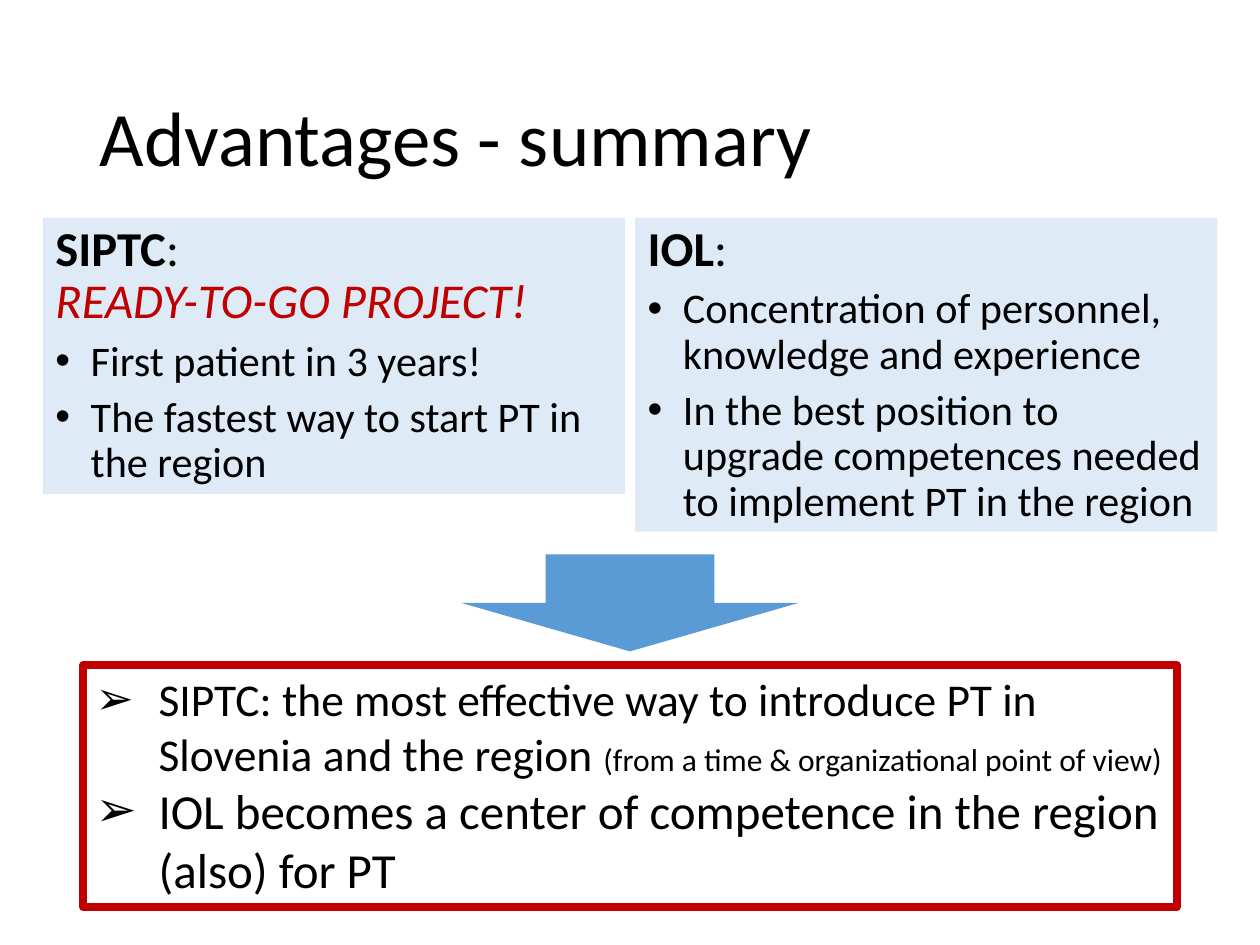
from dataclasses import dataclass

from lxml import etree
from pptx import Presentation
from pptx import util as u
from pptx.dml.color import RGBColor
from pptx.enum import shapes, text
from pptx.oxml.ns import qn

FONT = "Calibri"
BLACK, RED = "000000", "C00000"
PANEL_BLUE, ARROW_BLUE = "DEEBF7", "5B9BD5"
HEADING_SIZE, ITEM_SIZE = 27.8, 24.1


@dataclass
class Run:
    content: str
    size: float
    color: str = BLACK
    bold: bool = False
    italic: bool = False


@dataclass
class Panel:
    left: float
    height: float
    heading: list[Run]
    items: list[str]


PANELS = [
    Panel(0.34, 2.19,
          [Run("SIPTC", HEADING_SIZE, bold=True), Run(":\v", HEADING_SIZE),
           Run("READY-TO-GO PROJECT!", HEADING_SIZE, RED, italic=True)],
          ["First patient in 3 years!",
           "The fastest way to start PT in the region"]),
    Panel(5.04, 2.49,
          [Run("IOL", HEADING_SIZE, bold=True), Run(":", HEADING_SIZE)],
          ["Concentration of personnel, knowledge and experience",
           "In the best position to upgrade competences needed "
           "to implement PT in the region"]),
]

CONCLUSIONS = [
    [Run("SIPTC: the most effective way to introduce PT in Slovenia and the region ", 26),
     Run("(from a time & organizational point of view)", 18)],
    [Run("IOL becomes a center of competence in the region (also) for PT", 28)],
]


def rgb(color: str) -> RGBColor:
    return RGBColor.from_string(color)


def place(shape, left: float, top: float, width: float, height: float) -> None:
    shape.left, shape.top = u.Inches(left), u.Inches(top)
    shape.width, shape.height = u.Inches(width), u.Inches(height)


def prepare_frame(shape, anchor=text.MSO_ANCHOR.TOP):
    frame = shape.text_frame
    frame.word_wrap = True
    frame.auto_size = text.MSO_AUTO_SIZE.NONE
    frame.vertical_anchor = anchor
    return frame


def write_paragraph(frame, runs: list[Run], *, first: bool = False, bullet: str = "",
                    indent: float = 0, before: float = 0, spacing: float = 1.0) -> None:
    paragraph = frame.paragraphs[0] if first else frame.add_paragraph()
    paragraph.alignment = text.PP_ALIGN.LEFT
    paragraph.line_spacing = spacing
    paragraph.space_before = u.Pt(before)
    paragraph.space_after = u.Pt(0)
    properties = paragraph._p.get_or_add_pPr()
    properties.set("marL", str(u.Inches(indent)))
    properties.set("indent", str(-u.Inches(indent)))
    if bullet:
        etree.SubElement(properties, qn("a:buFont"), typeface="Arial")
        etree.SubElement(properties, qn("a:buChar"), char=bullet)
    else:
        etree.SubElement(properties, qn("a:buNone"))
    for item in runs:
        content, *rest = item.content.split("\v")
        run = paragraph.add_run()
        run.text = content
        font = run.font
        font.name, font.size = FONT, u.Pt(item.size)
        font.bold, font.italic = item.bold, item.italic
        font.color.rgb = rgb(item.color)
        if rest:
            paragraph.add_line_break()


def draw_panel(placeholder, panel: Panel) -> None:
    place(placeholder, panel.left, 1.73, 4.62, panel.height)
    placeholder.fill.solid()
    placeholder.fill.fore_color.rgb = rgb(PANEL_BLUE)
    frame = prepare_frame(placeholder)
    write_paragraph(frame, panel.heading, first=True, before=12, spacing=0.9)
    for item in panel.items:
        write_paragraph(frame, [Run(item, ITEM_SIZE)], bullet="•",
                        indent=0.28, before=6, spacing=0.9)


def draw_conclusions(slide) -> None:
    box = slide.shapes.add_shape(shapes.MSO_SHAPE.RECTANGLE, 0, 0, 0, 0)
    place(box, 0.66, 5.28, 8.68, 1.92)
    box.shadow.inherit = False
    box.fill.background()
    box.line.color.rgb = rgb(RED)
    box.line.width = u.Pt(4.5)
    frame = prepare_frame(box)
    for index, runs in enumerate(CONCLUSIONS):
        write_paragraph(frame, runs, first=index == 0, bullet="➢", indent=0.5)


def draw_arrow(slide) -> None:
    arrow = slide.shapes.add_shape(shapes.MSO_SHAPE.DOWN_ARROW, 0, 0, 0, 0)
    place(arrow, 3.66, 4.4, 2.68, 0.77)
    arrow.shadow.inherit = False
    arrow.fill.solid()
    arrow.fill.fore_color.rgb = rgb(ARROW_BLUE)
    arrow.line.fill.background()


def main() -> None:
    presentation = Presentation()
    presentation.slide_width, presentation.slide_height = u.Inches(10), u.Inches(7.5)
    slide = presentation.slides.add_slide(presentation.slide_layouts.get_by_name("Two Content"))
    title = slide.shapes.title
    place(title, 0.69, 0.4, 8.62, 1.45)
    write_paragraph(prepare_frame(title, text.MSO_ANCHOR.MIDDLE),
                    [Run("Advantages - summary", 44)], first=True, spacing=0.9)
    for index, panel in enumerate(PANELS, start=1):
        draw_panel(slide.placeholders[index], panel)
    draw_conclusions(slide)
    draw_arrow(slide)
    presentation.save("out.pptx")


if __name__ == "__main__":
    main()
